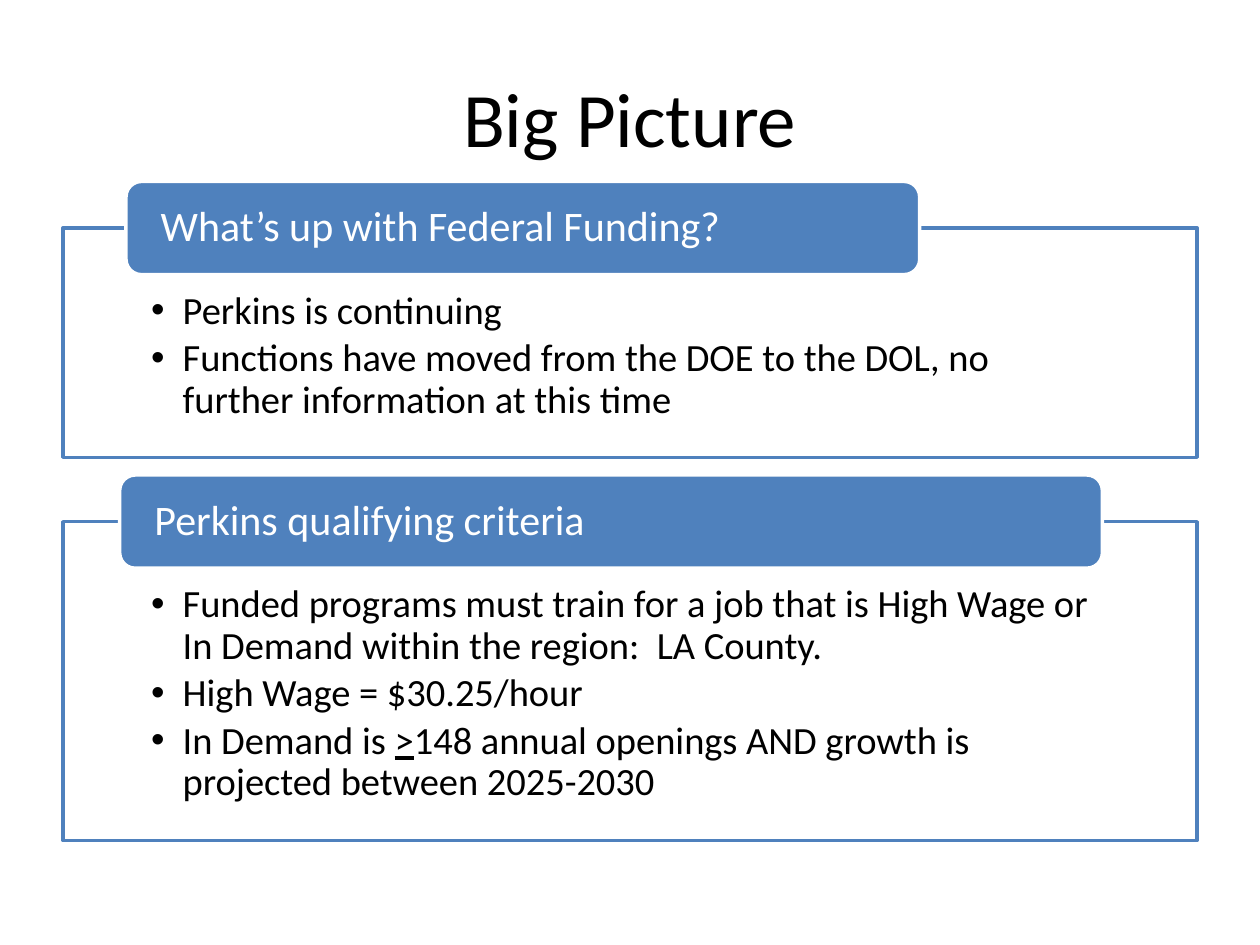
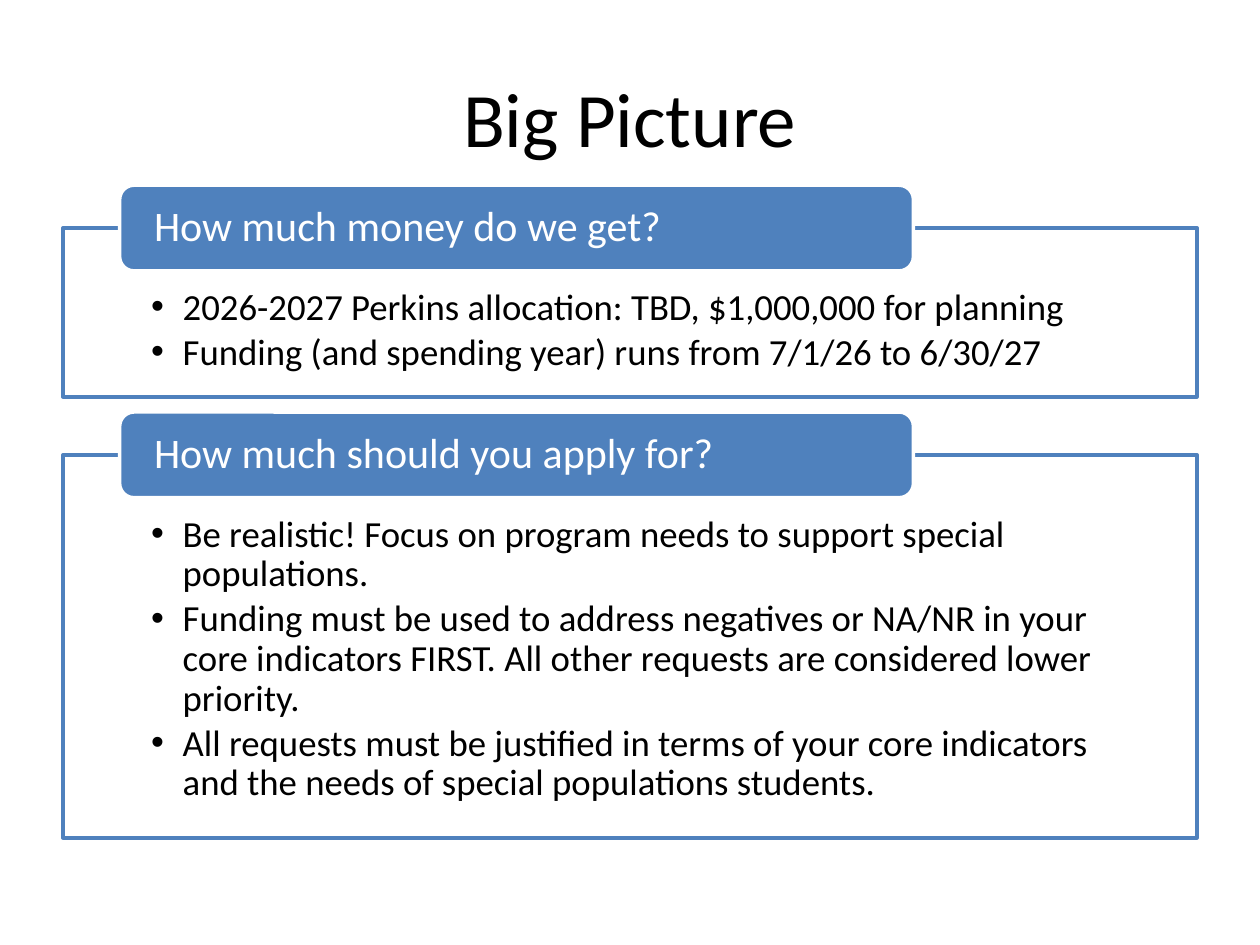
from dataclasses import dataclass

from lxml.etree import SubElement
from pptx import Presentation
from pptx.dml.color import RGBColor as RGB
from pptx.enum.shapes import MSO_SHAPE as Shape
from pptx.enum.text import MSO_ANCHOR as Anchor, MSO_AUTO_SIZE as Fit, PP_ALIGN as Align
from pptx.oxml.ns import qn
from pptx.util import Emu, Pt

SCALE = 9144  # EMU in one px, 100 px to the inch


def px(n):
    return Emu(n * SCALE)


@dataclass(frozen=True)
class Theme:
    font: str = "Calibri"
    ink: RGB = RGB(0, 0, 0)
    paper: RGB = RGB(255, 255, 255)
    blue: RGB = RGB(0x4F, 0x81, 0xBD)
    title: int = 44
    head: int = 24
    line: int = 2


def write(frame, lines, size, color, font, align=Align.LEFT, anchor=Anchor.TOP,
          inset=(10, 5, 10, 5), space=None, after=0, bullet=False):
    """Fill a frame with paragraphs; text between underscores is underlined."""
    frame.word_wrap, frame.auto_size = True, Fit.NONE
    frame.vertical_anchor = anchor
    (frame.margin_left, frame.margin_top,
     frame.margin_right, frame.margin_bottom) = map(px, inset)
    for i, line in enumerate(lines):
        par = frame.add_paragraph() if i else frame.paragraphs[0]
        par.alignment, par.line_spacing = align, space
        par.space_before, par.space_after = Pt(0), Pt(after)
        if bullet:
            props = par._p.get_or_add_pPr()
            props.set("marL", str(px(25)))
            props.set("indent", str(px(-25)))
            SubElement(props, qn("a:buChar"), char="•")
        par.font.size, par.font.name = Pt(size), font
        par.font.color.rgb = color
        for j, part in enumerate(line.split("_")):
            if part:
                run = par.add_run()
                run.text = part
                run.font.size, run.font.name = Pt(size), font
                run.font.color.rgb = color
                if j % 2:
                    run.font.underline = True


class Deck:
    def __init__(self, theme):
        self.theme = theme
        self.show = Presentation()
        self.show.slide_width, self.show.slide_height = px(1000), px(750)

    def page(self, title):
        layout = self.show.slide_layouts.get_by_name("Two Content")
        self.slide = self.show.slides.add_slide(layout)
        head, *self.lists = self.slide.placeholders
        self.place(head, 50, 30, 900, 125)
        write(head.text_frame, [title], self.theme.title, self.theme.ink,
              self.theme.font, align=Align.CENTER, anchor=Anchor.MIDDLE)

    def place(self, shape, x, y, w, h):
        shape.left, shape.top, shape.width, shape.height = map(px, (x, y, w, h))

    def paint(self, shape, fill, line):
        shape.fill.solid()
        shape.fill.fore_color.rgb = fill
        shape.line.color.rgb = line
        shape.line.width = Pt(self.theme.line)

    def panel(self, y, h, lines, size, inset):
        """Outline the next list placeholder and fill it with bullets."""
        box = self.lists.pop(0)
        self.place(box, 50, y, 900, h)
        self.paint(box, self.theme.paper, self.theme.blue)
        write(box.text_frame, lines, size, self.theme.ink, self.theme.font,
              inset=inset, space=0.9, after=round(size * 0.15, 1), bullet=True)

    def tab(self, x, y, w, h, label):
        box = self.slide.shapes.add_shape(
            Shape.ROUNDED_RECTANGLE, px(x), px(y), px(w), px(h))
        box.shadow.inherit = False
        self.paint(box, self.theme.blue, self.theme.paper)
        write(box.text_frame, [label], self.theme.head, self.theme.paper,
              self.theme.font, anchor=Anchor.MIDDLE, inset=(24, 0, 24, 0), space=0.9)

    def stack(self, parts, tall, gap, size, inset):
        """Stack panels, each with its tab centred on the top edge."""
        y = 181
        for label, x, w, h, lines in parts:
            self.panel(y, h, lines, size, inset)
            self.tab(x, y - tall // 2, w, tall, label)
            y += h + gap


POLICY = [
    ("What’s up with Federal Funding?", 100, 630, 182, [
        "Perkins is continuing",
        "Functions have moved from the DOE to the DOL, no further information at this time",
    ]),
    ("Perkins qualifying criteria", 95, 780, 253, [
        "Funded programs must train for a job that is High Wage or In Demand "
        "within the region:  LA County.",
        "High Wage = $30.25/hour",
        "In Demand is _>_148 annual openings AND growth is projected between 2025-2030",
    ]),
]
MONEY = [
    ("How much money do we get?", 95, 630, 134, [
        "2026-2027 Perkins allocation: TBD, $1,000,000 for planning",
        "Funding (and spending year) runs from 7/1/26 to 6/30/27",
    ]),
    ("How much should you apply for?", 95, 630, 304, [
        "Be realistic! Focus on program needs to support special populations.",
        "Funding must be used to address negatives or NA/NR in your core indicators "
        "FIRST. All other requests are considered lower priority.",
        "All requests must be justified in terms of your core indicators and the "
        "needs of special populations students.",
    ]),
]


def main():
    deck = Deck(Theme())
    deck.page("Big Picture")
    deck.stack(POLICY, tall=74, gap=51, size=22, inset=(70, 50, 70, 17))
    deck.page("Big Picture")
    deck.stack(MONEY, tall=68, gap=46, size=21, inset=(70, 48, 70, 16))
    deck.show.save("out.pptx")


if __name__ == "__main__":
    main()
